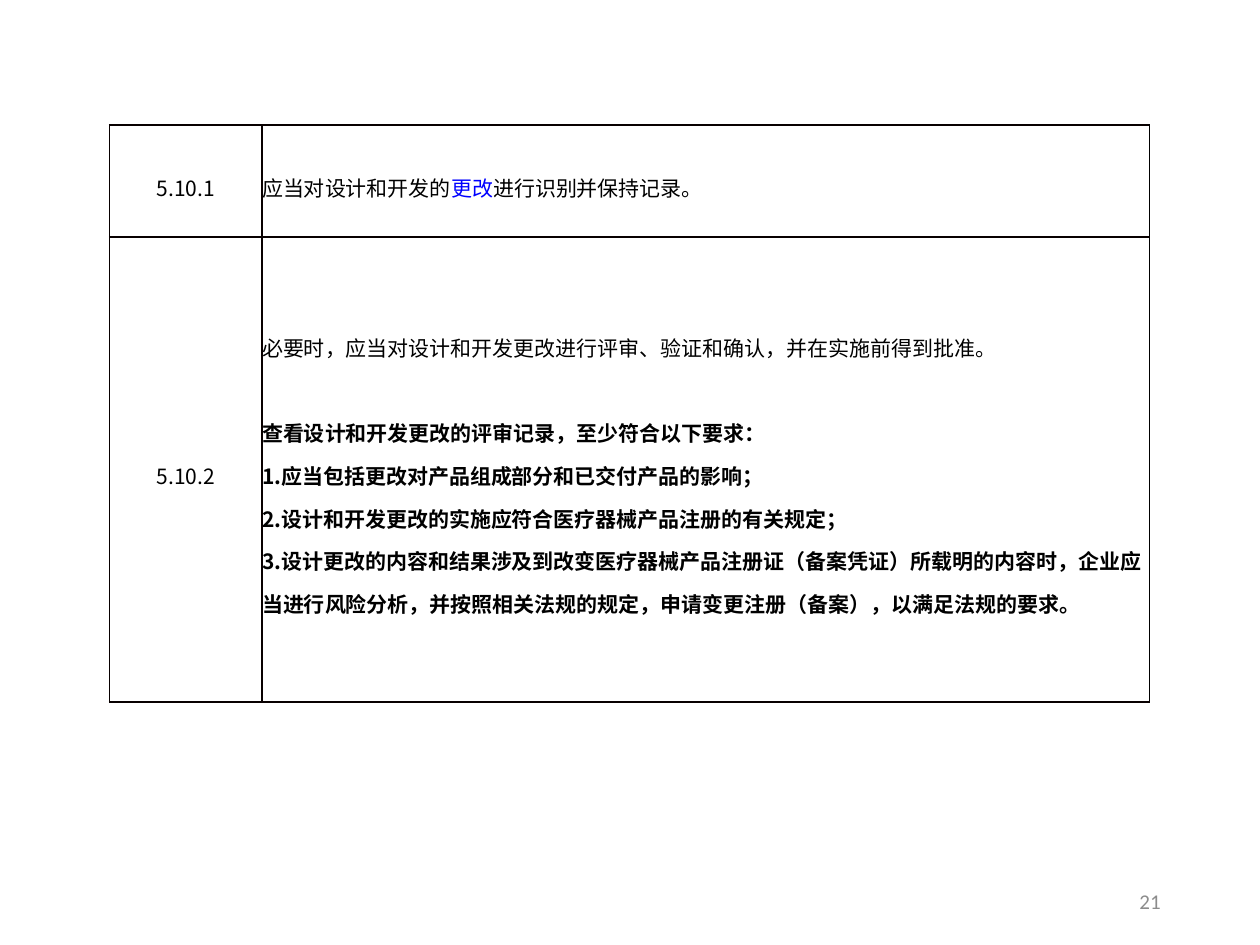
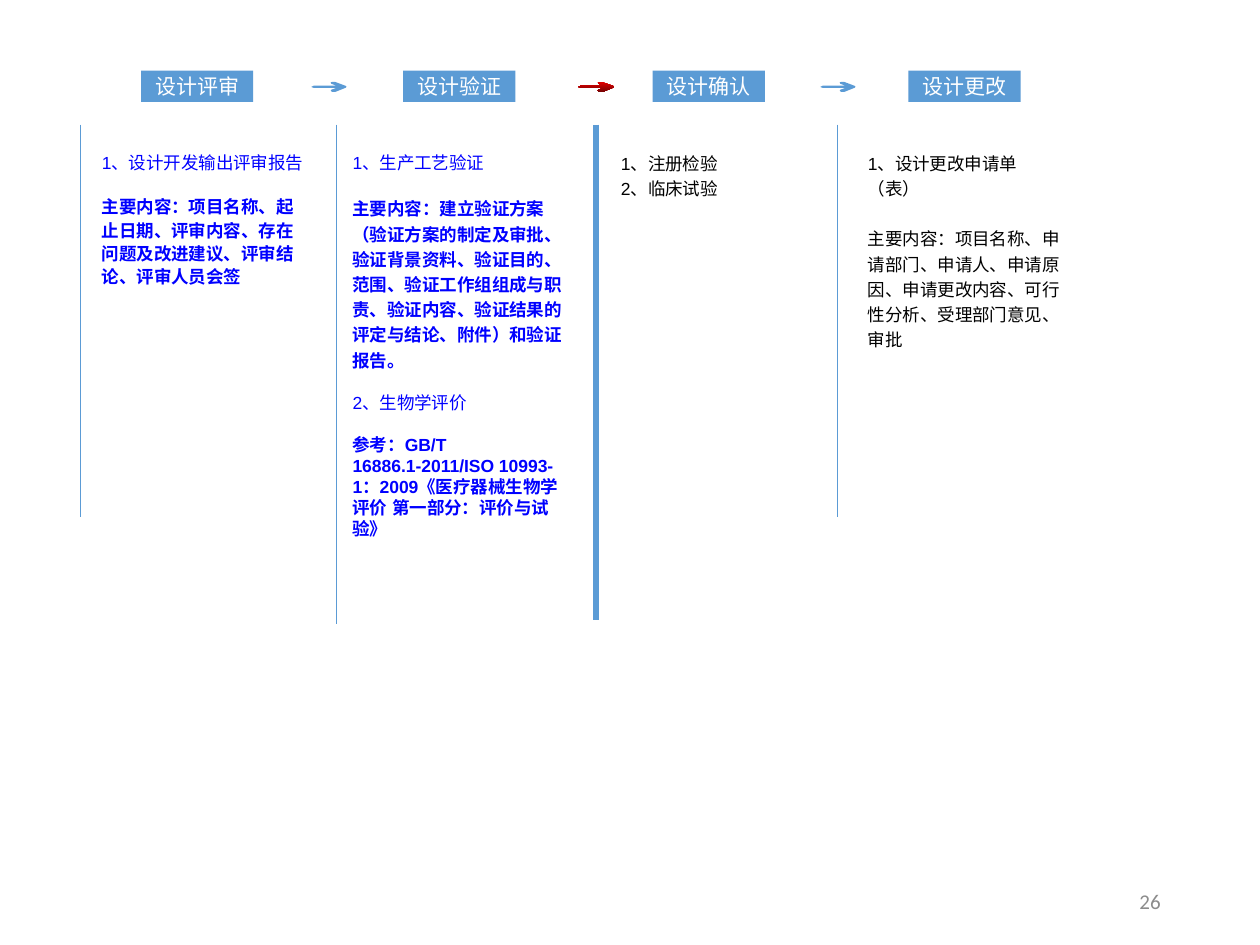
from dataclasses import dataclass

from lxml.etree import SubElement
from pptx import Presentation
from pptx.dml.color import RGBColor
from pptx.enum.shapes import MSO_CONNECTOR as Connector, MSO_SHAPE as Shape
from pptx.enum.text import MSO_ANCHOR as Anchor, MSO_AUTO_SIZE as AutoSize, PP_ALIGN as Align
from pptx.oxml.ns import qn
from pptx.util import Inches, Pt


@dataclass(frozen=True)
class Theme:
    accent: str = "5B9BD5"
    red_top: str = "E30000"
    red_bottom: str = "760303"
    mark: str = "0000FF"
    ink: str = "000000"
    grid: str = "080000"
    white: str = "FFFFFF"
    gray: str = "8C8C8C"
    label_font: str = "Calibri"
    table_font: str = "Noto Sans CJK SC"
    body_font: str = "Arial"
    label_size: int = 12
    body_size: int = 10


T = Theme()


@dataclass(frozen=True)
class Para:
    text: str
    bold: bool = False
    spacing: float = 1.0
    before: float = 0


# Helpers for text
def rgb(value):
    return RGBColor.from_string(value)


def style_run(r, font, size, color, bold=False):
    r.font.name, r.font.size, r.font.bold = font, Pt(size), bold
    r.font.color.rgb = rgb(color)
    SubElement(r.font._element, qn("a:ea")).set("typeface", font)


def style_paragraph(p, font, size, color, bold=False, align=Align.LEFT):
    p.alignment = align
    for r in p.runs:
        style_run(r, font, size, color, bold)


def fill_paragraphs(tf, paras, font, size, color):
    for i, para in enumerate(paras):
        p = tf.add_paragraph() if i else tf.paragraphs[0]
        p.text = para.text
        p.line_spacing = para.spacing
        p.space_before = Pt(para.before)
        style_paragraph(p, font, size, color, para.bold)


def add_text_box(s, x, y, w, h):
    tf = s.shapes.add_textbox(Inches(x), Inches(y), Inches(w), Inches(h)).text_frame
    tf.word_wrap = True
    return tf


def add_page_number(s, number):
    tf = add_text_box(s, 7.06, 6.95, 2.25, 0.4)
    tf.vertical_anchor = Anchor.MIDDLE
    tf.text = number
    style_paragraph(tf.paragraphs[0], T.label_font, T.label_size, T.gray, align=Align.RIGHT)


# Helpers for the requirement table
def set_border(cell, side, color, width):
    ln = SubElement(cell._tc.get_or_add_tcPr(), qn(f"a:{side}"), w=str(Pt(width)))
    SubElement(SubElement(ln, qn("a:solidFill")), qn("a:srgbClr"), val=color)


def prepare_cell(cell, last_column):
    cell.margin_left = cell.margin_right = cell.margin_top = cell.margin_bottom = 0
    cell.vertical_anchor = Anchor.MIDDLE
    for side in ("lnL", "lnR", "lnT", "lnB"):
        thin = last_column and side == "lnR"
        set_border(cell, side, T.ink if thin else T.grid, 0.75 if thin else 1)
    cell.fill.background()


def add_requirement_table(s, rows, col_widths, row_heights):
    frame = s.shapes.add_table(len(rows), len(col_widths), Inches(0.87), Inches(0.99),
                               Inches(sum(col_widths)), Inches(sum(row_heights)))
    table = frame.table
    table.first_row = table.horz_banding = False
    for column, width in zip(table.columns, col_widths):
        column.width = Inches(width)
    for row, height, (clause, paras) in zip(table.rows, row_heights, rows):
        row.height = Inches(height)
        number, content = row.cells
        prepare_cell(number, False)
        prepare_cell(content, True)
        fill_paragraphs(number.text_frame, [Para(clause, spacing=1.4)],
                        T.table_font, T.label_size, T.ink)
        number.text_frame.paragraphs[0].alignment = Align.CENTER
        fill_paragraphs(content.text_frame, paras, T.table_font, T.label_size, T.ink)
    return table


def mark_word(p, word):
    before, after = p.text.split(word)
    p.text = before
    for text in (word, after):
        p.add_run().text = text
    for r in p.runs:
        style_run(r, T.table_font, T.label_size, T.mark if r.text == word else T.ink)


# Helpers for the design process
def add_stage_label(s, x, text):
    sp = s.shapes.add_shape(Shape.RECTANGLE, Inches(x), Inches(0.56), Inches(0.89), Inches(0.25))
    sp.shadow.inherit = False
    sp.fill.solid()
    sp.fill.fore_color.rgb = rgb(T.accent)
    sp.line.fill.background()
    tf = sp.text_frame
    tf.margin_left = tf.margin_right = tf.margin_top = tf.margin_bottom = 0
    tf.vertical_anchor = Anchor.MIDDLE
    tf.text = text
    style_paragraph(tf.paragraphs[0], T.label_font, T.label_size, T.white, align=Align.CENTER)


def add_stage_arrow(s, x, active=False):
    # Outline in thousandths of an inch
    outline = [(20, 30), (200, 30), (160, 15), (155, 5), (165, 0), (190, 0), (275, 32),
               (280, 40), (275, 46), (190, 80), (165, 80), (155, 70), (160, 62),
               (200, 48), (20, 48)]
    builder = s.shapes.build_freeform(0, 40, scale=Inches(0.001))
    builder.add_line_segments(outline, close=True)
    sp = builder.convert_to_shape(Inches(x), Inches(0.65))
    sp.shadow.inherit = False
    sp.line.fill.background()
    if active:
        sp.fill.gradient()
        sp.fill.gradient_angle = 270
        for stop, color in zip(sp.fill.gradient_stops, (T.red_top, T.red_bottom)):
            stop.color.rgb = rgb(color)
    else:
        sp.fill.solid()
        sp.fill.fore_color.rgb = rgb(T.accent)


def add_divider(s, x, bottom, width):
    line = s.shapes.add_connector(Connector.STRAIGHT, Inches(x), Inches(0.99),
                                  Inches(x), Inches(bottom))
    line.line.color.rgb = rgb(T.accent)
    line.line.width = Pt(width)
    SubElement(line._element.spPr, qn("a:effectLst"))


def add_stage_notes(s, box, color, paras):
    tf = add_text_box(s, *box)
    tf.auto_size = AutoSize.SHAPE_TO_FIT_TEXT
    fill_paragraphs(tf, paras, T.body_font, T.body_size, color)


# Slides
def build_change_requirements(s):
    rows = [
        ("5.10.1", [Para("应当对设计和开发的更改进行识别并保持记录。", spacing=1.4)]),
        ("5.10.2", [
            Para("必要时，应当对设计和开发更改进行评审、验证和确认，并在实施前得到批准。", spacing=1.4),
            Para("查看设计和开发更改的评审记录，至少符合以下要求：", True, 1.4, 24.3),
            Para("1.应当包括更改对产品组成部分和已交付产品的影响；", True, 1.4),
            Para("2.设计和开发更改的实施应符合医疗器械产品注册的有关规定；", True, 1.4),
            Para("3.设计更改的内容和结果涉及到改变医疗器械产品注册证（备案凭证）所载明的内容时，"
                 "企业应当进行风险分析，并按照相关法规的规定，申请变更注册（备案），"
                 "以满足法规的要求。", True, 1.4),
        ]),
    ]
    table = add_requirement_table(s, rows, (1.21, 7.04), (0.89, 3.69))
    mark_word(table.cell(0, 1).text_frame.paragraphs[0], "更改")
    add_page_number(s, "21")


def build_design_stages(s):
    for x, label in ((1.12, "设计评审"), (3.2, "设计验证"), (5.18, "设计确认"), (7.21, "设计更改")):
        add_stage_label(s, x, label)
    for x, active in ((2.47, False), (4.59, True), (6.51, False)):
        add_stage_arrow(s, x, active)
    for x, bottom, width in ((0.64, 4.1, 0.5), (2.67, 4.95, 0.5), (4.73, 4.92, 3), (6.65, 4.1, 0.5)):
        add_divider(s, x, bottom, width)

    notes = [
        ((0.71, 1.16, 1.83, 1.18), T.mark, [
            Para("1、设计开发输出评审报告"),
            Para("主要内容：项目名称、起止日期、评审内容、存在问题及改进建议、评审结论、评审人员会签",
                 True, 1.1, 12),
        ]),
        ((2.7, 1.16, 1.96, 3.36), T.mark, [
            Para("1、生产工艺验证"),
            Para("主要内容：建立验证方案（验证方案的制定及审批、验证背景资料、验证目的、范围、"
                 "验证工作组组成与职责、验证内容、验证结果的评定与结论、附件）和验证报告。",
                 True, 1.2, 12),
            Para("2、生物学评价", before=12),
            Para("参考：GB/T 16886.1-2011/ISO 10993-1：2009《医疗器械生物学评价 第一部分：评价与试验》",
                 True, before=12),
        ]),
        ((4.83, 1.13, 1.76, 0.5), T.ink, [
            Para("1、注册检验", spacing=1.2),
            Para("2、临床试验", spacing=1.2),
        ]),
        ((6.79, 1.13, 1.76, 1.72), T.ink, [
            Para("1、设计更改申请单（表）", spacing=1.2),
            Para("主要内容：项目名称、申请部门、申请人、申请原因、申请更改内容、可行性分析、"
                 "受理部门意见、审批", spacing=1.2, before=14.4),
        ]),
    ]
    for box, color, paras in notes:
        add_stage_notes(s, box, color, paras)
    add_page_number(s, "26")


def main():
    prs = Presentation()
    prs.slide_width, prs.slide_height = Inches(10), Inches(7.5)
    for build in (build_change_requirements, build_design_stages):
        build(prs.slides.add_slide(prs.slide_layouts[6]))
    prs.save("out.pptx")


if __name__ == "__main__":
    main()
